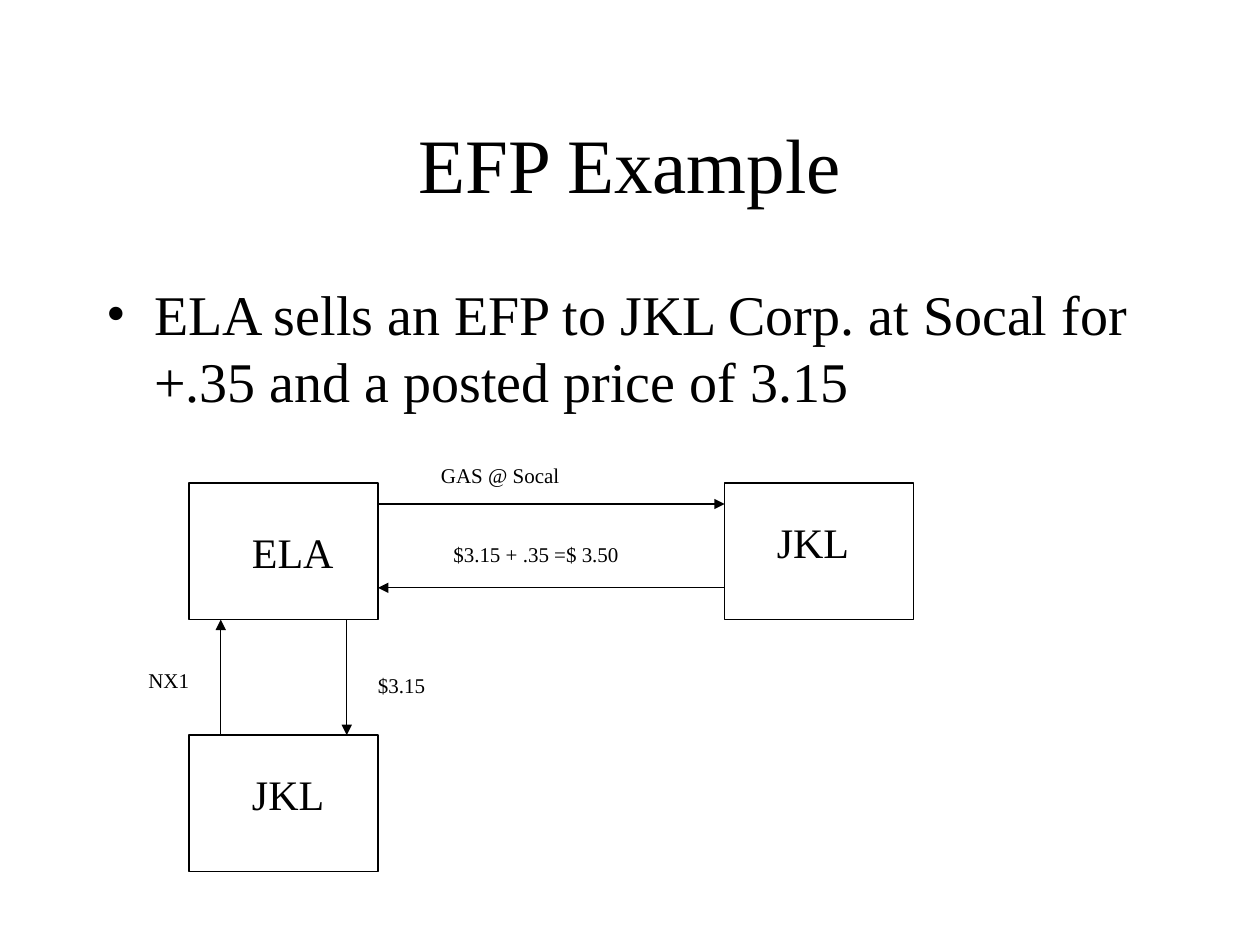
from lxml.etree import SubElement
from pptx import Presentation
from pptx.dml.color import RGBColor
from pptx.enum.shapes import MSO_CONNECTOR, MSO_SHAPE
from pptx.enum.text import MSO_ANCHOR, MSO_AUTO_SIZE, PP_ALIGN
from pptx.oxml.ns import qn
from pptx.util import Cm, Pt

BLACK = RGBColor(0x00, 0x00, 0x00)
FONT = "Times New Roman"
LINE_WIDTH = Pt(0.75)
PARTY_WIDTH, PARTY_HEIGHT = 3.81, 2.75
COLUMN_STEP, ROW_STEP = 10.8, 5.08


def add_text(slide, text, left, top, width, height, size):
    """Add a text box, with lengths in centimetres."""
    shape = slide.shapes.add_textbox(Cm(left), Cm(top), Cm(width), Cm(height))
    shape.text_frame.text = text
    font = shape.text_frame.paragraphs[0].runs[0].font
    font.name, font.size, font.color.rgb = FONT, Pt(size), BLACK
    return shape.text_frame


def add_label(slide, text, left, top, width, height, size):
    """Add a one-line label that fits its text."""
    text_frame = add_text(slide, text, left, top, width, height, size)
    text_frame.word_wrap = False
    text_frame.auto_size = MSO_AUTO_SIZE.SHAPE_TO_FIT_TEXT


def add_title(slide, left, top, width, height):
    text_frame = add_text(slide, "EFP Example", left, top, width, height, 44)
    text_frame.word_wrap = True
    text_frame.vertical_anchor = MSO_ANCHOR.MIDDLE
    text_frame.paragraphs[0].alignment = PP_ALIGN.CENTER


def add_body(slide, left, top, width, height):
    text = "ELA sells an EFP to JKL Corp. at Socal for +.35 and a posted price of 3.15"
    text_frame = add_text(slide, text, left, top, width, height, 32)
    text_frame.word_wrap = True
    paragraph = text_frame.paragraphs[0]
    paragraph.space_before = Pt(8)
    # Hanging bullet
    properties = paragraph._p.get_or_add_pPr()
    properties.set("marL", str(Cm(0.96)))
    properties.set("indent", str(-Cm(0.96)))
    SubElement(properties, qn("a:buFont"), typeface=FONT)
    SubElement(properties, qn("a:buChar"), char="•")


def add_party(slide, left, top):
    shape = slide.shapes.add_shape(
        MSO_SHAPE.RECTANGLE, Cm(left), Cm(top), Cm(PARTY_WIDTH), Cm(PARTY_HEIGHT))
    shape.shadow.inherit = False
    shape.fill.background()
    shape.line.color.rgb = BLACK
    shape.line.width = LINE_WIDTH


def add_arrow(slide, start_x, start_y, end_x, end_y):
    connector = slide.shapes.add_connector(
        MSO_CONNECTOR.STRAIGHT, Cm(start_x), Cm(start_y), Cm(end_x), Cm(end_y))
    connector.line.color.rgb = BLACK
    connector.line.width = LINE_WIDTH
    SubElement(connector.line._get_or_add_ln(), qn("a:tailEnd"), type="triangle")
    SubElement(connector._element.spPr, qn("a:effectLst"))


def add_diagram(slide, left, top):
    """Draw the parties and the flows between them, relative to the first party."""
    for column, row in ((0, 0), (1, 0), (0, 1)):
        add_party(slide, left + column * COLUMN_STEP, top + row * ROW_STEP)

    # Party names
    for text, x, y, width in (("ELA", 1.02, 0.74, 2.24),
                              ("JKL", 1.02, 5.62, 1.98),
                              ("JKL", 11.6, 0.54, 1.98)):
        add_label(slide, text, left + x, top + y, width, 1.27, 24)

    # Flows: across to the counterparty, then down to the exchange of futures
    for start_x, start_y, end_x, end_y in (
            (PARTY_WIDTH, 0.42, COLUMN_STEP, 0.42),
            (COLUMN_STEP, 2.11, PARTY_WIDTH, 2.11),
            (3.18, PARTY_HEIGHT, 3.18, ROW_STEP),
            (0.64, ROW_STEP, 0.64, PARTY_HEIGHT)):
        add_arrow(slide, left + start_x, top + start_y, left + end_x, top + end_y)

    # Flow labels, each a little wider than its text
    for text, x, y, width in (("GAS @ Socal", 4.83, -0.55, 2.95),
                              ("$3.15 + .35 =$ 3.50", 5.08, 1.05, 3.9),
                              ("$3.15", 3.56, 3.69, 1.55),
                              ("NX1", -1.07, 3.59, 1.45)):
        add_label(slide, text, left + x, top + y, width, 0.76, 12)


def main():
    presentation = Presentation()
    presentation.slide_width, presentation.slide_height = Cm(25.4), Cm(19.05)
    slide = presentation.slides.add_slide(presentation.slide_layouts[6])
    add_title(slide, 1.9, 1.7, 21.6, 3.18)
    add_body(slide, 1.9, 5.51, 21.6, 11.43)
    add_diagram(slide, 3.81, 9.74)
    presentation.save("out.pptx")


if __name__ == "__main__":
    main()
